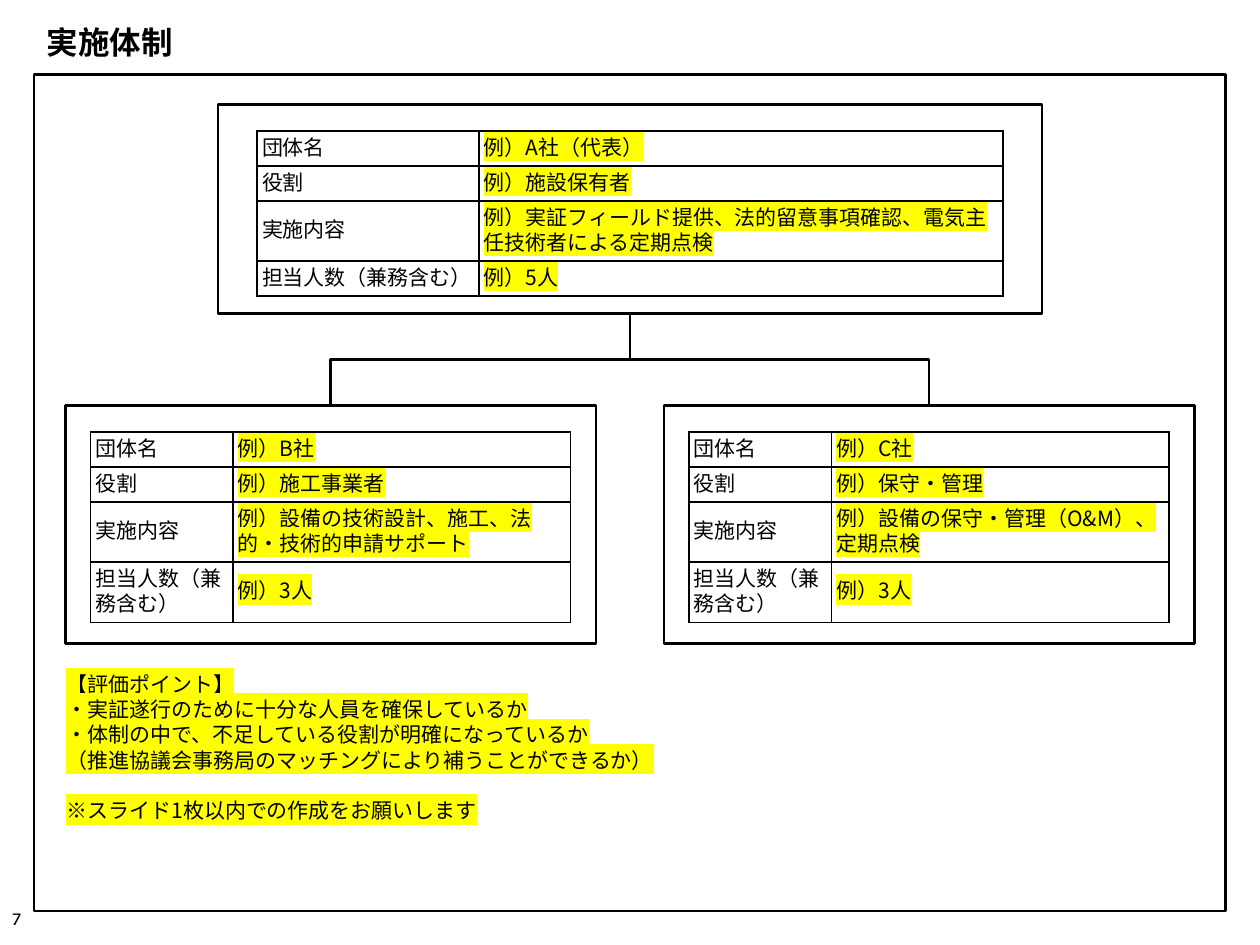
from lxml import etree
from pptx import Presentation
from pptx.dml.color import RGBColor
from pptx.enum.shapes import MSO_CONNECTOR, MSO_SHAPE
from pptx.enum.text import MSO_ANCHOR, PP_ALIGN
from pptx.oxml.ns import qn
from pptx.util import Pt

ELBOW = MSO_CONNECTOR.ELBOW
RECT = MSO_SHAPE.RECTANGLE
MIDDLE = MSO_ANCHOR.MIDDLE
LEFT = PP_ALIGN.LEFT
COLORS = {"ink": "000000", "mark": "FFFF00"}
JP, LATIN = "Noto Sans CJK JP", "Karla"
INK = RGBColor.from_string(COLORS["ink"])
LINE_H = 14.4


def write(p, text, size=12, font=JP, bold=False, mark=False, spacing=None):
    p.alignment = LEFT
    if spacing:
        p.line_spacing = Pt(spacing)
    r = p.add_run()
    r.text = text
    r.font.size = Pt(size)
    r.font.bold = bold
    r.font.name = font
    r.font.color.rgb = INK
    rPr = r.font._element
    ea = etree.Element(qn("a:ea"), typeface=font)
    rPr.find(qn("a:latin")).addnext(ea)
    if mark:
        hl = etree.Element(qn("a:highlight"))
        etree.SubElement(hl, qn("a:srgbClr"), val=COLORS["mark"])
        rPr.find(qn("a:solidFill")).addnext(hl)


def add_borders(cell):
    tcPr = cell._tc.get_or_add_tcPr()
    for side in ("lnL", "lnR", "lnT", "lnB"):
        ln = etree.SubElement(tcPr, qn(f"a:{side}"), w=str(Pt(1)))
        fill = etree.SubElement(ln, qn("a:solidFill"))
        etree.SubElement(fill, qn("a:srgbClr"), val=COLORS["ink"])


prs = Presentation()
prs.slide_width, prs.slide_height = Pt(720), Pt(540)
s = prs.slides.add_slide(prs.slide_layouts[5])

title = s.shapes.title
title.left, title.top, title.width, title.height = Pt(19.4), Pt(5), Pt(681.1), Pt(37.5)
title.text_frame.vertical_anchor = MIDDLE
write(title.text_frame.paragraphs[0], "実施体制", size=18, bold=True)

tb = s.shapes.add_textbox(Pt(0), Pt(510.5), Pt(162), Pt(28.8))
tb.text_frame.word_wrap = True
tb.text_frame.vertical_anchor = MIDDLE
write(tb.text_frame.paragraphs[0], "7", size=10.5, font=LATIN)

notes = [
    "【評価ポイント】",
    "・実証遂行のために十分な人員を確保しているか",
    "・体制の中で、不足している役割が明確になっているか",
    "（推進協議会事務局のマッチングにより補うことができるか）",
    "※スライド1枚以内での作成をお願いします",
]
tb = s.shapes.add_textbox(Pt(30.9), Pt(380.2), Pt(360), Pt(94.3))
tf = tb.text_frame
tf.word_wrap = True
for i, text in enumerate(notes):
    p = tf.add_paragraph() if i else tf.paragraphs[0]
    write(p, text, mark=True, spacing=LINE_H)
p.space_before = Pt(LINE_H)

labels = ["団体名", "役割", "実施内容", "担当人数（兼務含む）"]
top_box = (124.6, 59.8, 470.9, 119.5)
left_box = (37.4, 231.8, 303.1, 136.1)
right_box = (379.4, 231.8, 303.1, 136.1)
groups = [
    (top_box, (126.7, 299.5), (20, 20, 34.4, 20),
     ["例）A社（代表）", "例）施設保有者",
      "例）実証フィールド提供、法的留意事項確認、電気主任技術者による定期点検", "例）5人"]),
    (left_box, (81.4, 193), (20, 20, 34.4, 34.4),
     ["例）B社", "例）施工事業者", "例）設備の技術設計、施工、法的・技術的申請サポート", "例）3人"]),
    (right_box, (81.4, 193), (20, 20, 34.4, 34.4),
     ["例）C社", "例）保守・管理", "例）設備の保守・管理（O&M）、定期点検", "例）3人"]),
]
frames = [(19.4, 42.5, 681.1, 478.1)]
for box, cols, rows, values in groups:
    x, y, w, h = box
    frames.append(box)
    tbl = s.shapes.add_table(4, 2, Pt(x + (w - sum(cols)) / 2), Pt(y + 15.1),
                             Pt(sum(cols)), Pt(sum(rows))).table
    tbl.first_row = tbl.horz_banding = False
    for col, width in zip(tbl.columns, cols):
        col.width = Pt(width)
    for i, height in enumerate(rows):
        tbl.rows[i].height = Pt(height)
        for j, text in enumerate((labels[i], values[i])):
            cell = tbl.cell(i, j)
            cell.vertical_anchor = MIDDLE
            cell.margin_left = cell.margin_right = Pt(2.8)
            cell.margin_top = cell.margin_bottom = Pt(2.8)
            add_borders(cell)
            cell.fill.background()
            write(cell.text_frame.paragraphs[0], text, mark=j == 1, spacing=LINE_H)

for x, y, w, h in frames:
    sp = s.shapes.add_shape(RECT, Pt(x), Pt(y), Pt(w), Pt(h))
    sp.shadow.inherit = False
    sp.fill.background()
    sp.line.color.rgb = INK
    sp.line.width = Pt(1.5)

trunk_x = top_box[0] + top_box[2] / 2
trunk_y = top_box[1] + top_box[3]
for box, side, angle in ((left_box, -1, 90), (right_box, 1, 270)):
    child_x = box[0] + box[2] / 2
    dx, dy = abs(child_x - trunk_x) / 2, (box[1] - trunk_y) / 2
    cx, cy = (child_x + trunk_x) / 2, trunk_y + dy
    c = s.shapes.add_connector(ELBOW, Pt(cx - side * dy), Pt(cy + dx),
                               Pt(cx + side * dy), Pt(cy - dx))
    c.line.color.rgb = INK
    c.line.width = Pt(1.5)
    spPr = c._element.spPr
    spPr.find(qn("a:xfrm")).set("rot", str(angle * 60000))
    etree.SubElement(spPr, qn("a:effectLst"))

prs.save("out.pptx")
